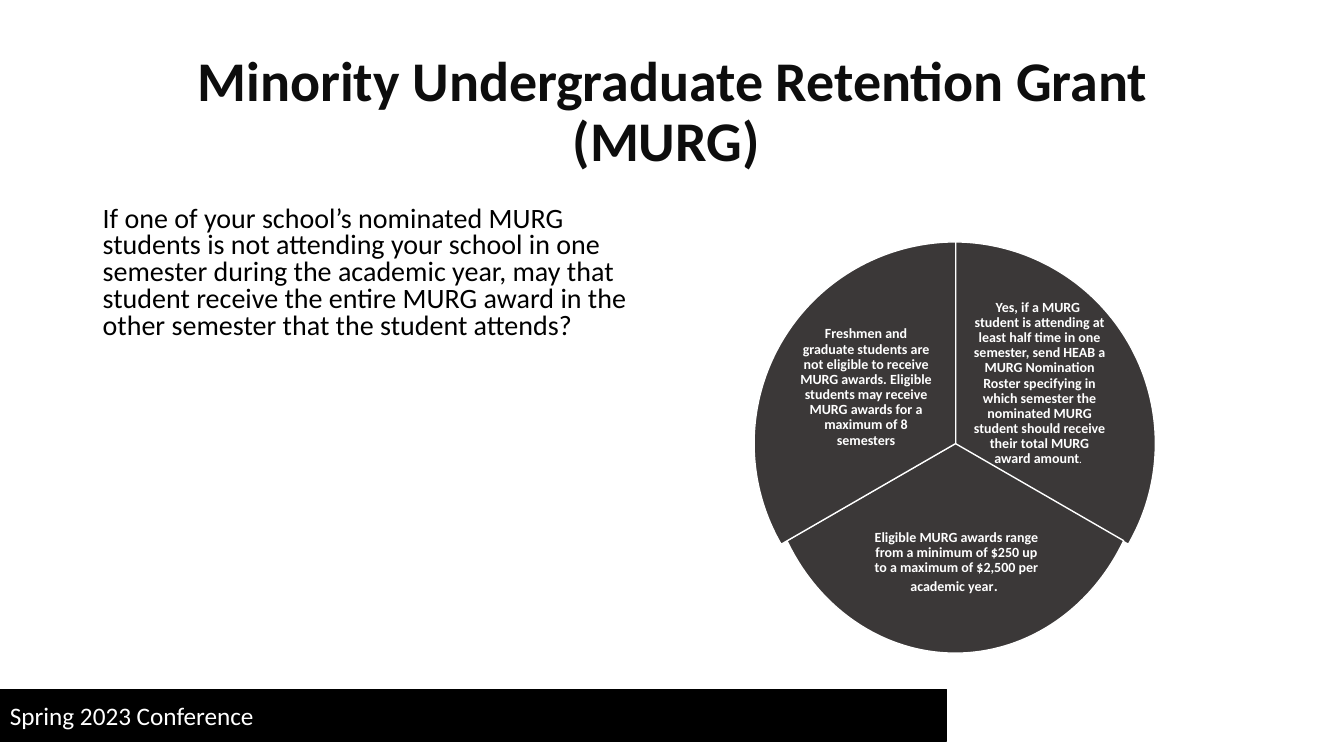
from pptx import Presentation
from pptx.dml.color import RGBColor
from pptx.enum.shapes import MSO_SHAPE as Shape
from pptx.enum.text import MSO_ANCHOR as Anchor, PP_ALIGN as Align
from pptx.util import Inches, Pt

BLACK = RGBColor(0x00, 0x00, 0x00)
WHITE = RGBColor(0xFF, 0xFF, 0xFF)
TITLE_INK = RGBColor(0x0D, 0x0D, 0x0D)
WEDGE_GRAY = RGBColor(0x3B, 0x38, 0x38)

FONT = "Calibri"
FOOTER = "Spring 2023 Conference"
TITLE = "Minority Undergraduate Retention Grant (MURG) "
QUESTION = (
    "If one of your school’s nominated MURG students is not attending your "
    "school in one semester during the academic year, may that student receive "
    "the entire MURG award in the other semester that the student attends?"
)

# Each wedge: box, start and end angle in degrees, label box,
# label runs as (text, size, bold)
WEDGES = [
    ((7.46, 2.4, 4, 4), (270, 30), (9.64, 3.14, 1.34, 1.33), [
        ("Yes, if a MURG  student is attending at least half time in one "
         "semester, send HEAB a MURG Nomination Roster specifying in which "
         "semester the nominated MURG student should receive their total MURG "
         "award amount", 10, True),
        (". ", 8, False)]),
    ((7.59, 2.32, 3.77, 4.16), (30, 150), (8.63, 4.94, 1.71, 1.29), [
        ("Eligible MURG awards range from a minimum of $250 up to a maximum of "
         "$2,500 per academic year", 10, True),
        (". ", 13, False)]),
    ((7.48, 2.4, 4, 4), (150, 270), (7.91, 3.18, 1.36, 1.33), [
        ("Freshmen and graduate students are not eligible to receive MURG "
         "awards. Eligible students may receive MURG awards for a maximum of 8 "
         "semesters", 10, True)]),
]


def add_filled(slide, preset, box, fill, line):
    shape = slide.shapes.add_shape(preset, *map(Inches, box))
    shape.shadow.inherit = False
    shape.fill.solid()
    shape.fill.fore_color.rgb = fill
    shape.line.color.rgb = line
    shape.line.width = Pt(1)
    return shape


def write(frame, runs, color, align=Align.LEFT, anchor=Anchor.MIDDLE, spacing=None):
    """Fill a text frame with one paragraph of (text, size, bold) runs."""
    frame.word_wrap = True
    frame.vertical_anchor = anchor
    paragraph = frame.paragraphs[0]
    paragraph.alignment = align
    paragraph.line_spacing = spacing
    for text, size, bold in runs:
        run = paragraph.add_run()
        run.text = text
        run.font.name = FONT
        run.font.size = Pt(size)
        run.font.bold = bold
        run.font.color.rgb = color


def add_text(slide, box, runs, color, inset=None, **layout):
    frame = slide.shapes.add_textbox(*map(Inches, box)).text_frame
    if inset is not None:
        frame.margin_left = frame.margin_right = Inches(inset)
        frame.margin_top = frame.margin_bottom = Inches(inset)
    write(frame, runs, color, **layout)


def main():
    deck = Presentation()
    deck.slide_width, deck.slide_height = Inches(13.33), Inches(7.5)
    slide = deck.slides.add_slide(deck.slide_layouts[6])

    footer = add_filled(slide, Shape.RECTANGLE, (0, 6.84, 9.39, 0.51), BLACK, BLACK)
    write(footer.text_frame, [(FOOTER, 18, False)], WHITE)

    add_text(slide, (0.92, 0.4, 11.5, 1.45), [(TITLE, 40, True)], TITLE_INK,
             align=Align.CENTER, spacing=0.9)
    add_text(slide, (0.92, 2, 5.67, 1.92), [(QUESTION, 20, False)], BLACK,
             anchor=Anchor.TOP, spacing=0.8)

    for box, angles, label_box, label in WEDGES:
        wedge = add_filled(slide, Shape.PIE, box, WEDGE_GRAY, WHITE)
        for index, degrees in enumerate(angles):
            # One degree is 60000 units; adjustments count in 100000 units
            wedge.adjustments[index] = degrees * 0.6
        add_text(slide, label_box, label, WHITE, inset=0.01,
                 align=Align.CENTER, spacing=0.9)

    deck.save("out.pptx")


if __name__ == "__main__":
    main()
